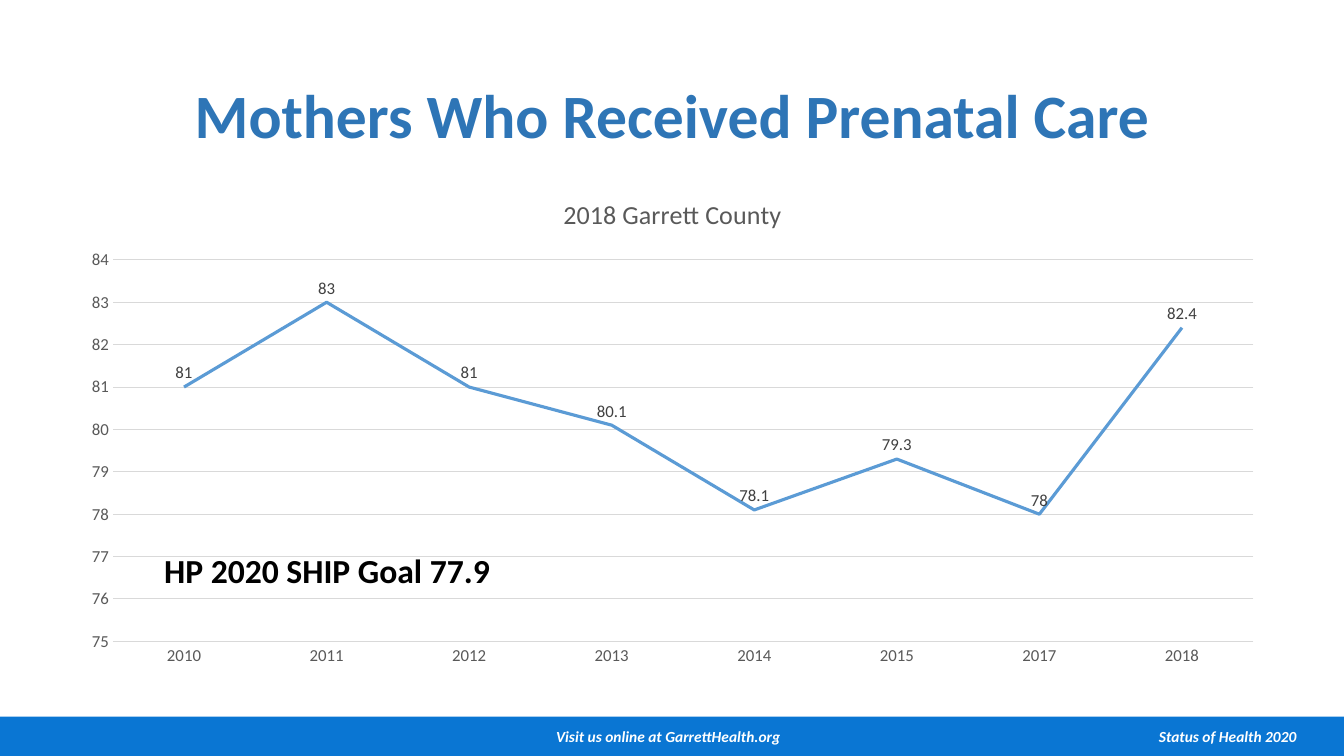
import pptx
import pptx.chart.data
import pptx.dml.color
import pptx.enum.chart
import pptx.enum.shapes
import pptx.enum.text
import pptx.util

Inches = pptx.util.Inches
Pt = pptx.util.Pt
RGBColor = pptx.dml.color.RGBColor
ALIGN = pptx.enum.text.PP_ALIGN
ANCHOR = pptx.enum.text.MSO_ANCHOR

FONT = "Calibri"
TITLE_BLUE = RGBColor(0x2E, 0x75, 0xB6)
BAND_BLUE = RGBColor(0x0A, 0x76, 0xD3)
LINE_BLUE = RGBColor(0x5B, 0x9B, 0xD5)
AXIS_GRAY = RGBColor(0x59, 0x59, 0x59)
LABEL_GRAY = RGBColor(0x40, 0x40, 0x40)
GRID_GRAY = RGBColor(0xD9, 0xD9, 0xD9)
WHITE = RGBColor(0xFF, 0xFF, 0xFF)
BLACK = RGBColor(0, 0, 0)

TITLE = "Mothers Who Received Prenatal Care"
CHART_TITLE = "2018 Garrett County"
GOAL = "HP 2020 SHIP Goal 77.9"
PRENATAL_CARE = {
    "2010": 81, "2011": 83, "2012": 81, "2013": 80.1,
    "2014": 78.1, "2015": 79.3, "2017": 78, "2018": 82.4,
}
BAND = (0, 7.11, 13.33, 0.39)
# text, box (left, top, width, height), alignment
FOOTER = [
    ("Visit us online at GarrettHealth.org", (4.63, 7.11, 4, 0.39), ALIGN.CENTER),
    ("Status of Health 2020", (9.96, 7.11, 3, 0.39), ALIGN.RIGHT),
]


def style_font(font, size, color, bold=False, italic=False):
    font.name = FONT
    font.size = Pt(size)
    font.color.rgb = color
    font.bold = bold
    font.italic = italic


def add_text(slide, text, box, size, color, align=ALIGN.LEFT,
             anchor=ANCHOR.MIDDLE, italic=False):
    frame = slide.shapes.add_textbox(*map(Inches, box)).text_frame
    frame.word_wrap = True
    frame.vertical_anchor = anchor
    paragraph = frame.paragraphs[0]
    paragraph.alignment = align
    run = paragraph.add_run()
    run.text = text
    style_font(run.font, size, color, bold=True, italic=italic)


def add_band(slide):
    band = slide.shapes.add_shape(
        pptx.enum.shapes.MSO_SHAPE.RECTANGLE, *map(Inches, BAND))
    band.shadow.inherit = False
    band.fill.solid()
    band.fill.fore_color.rgb = BAND_BLUE
    band.line.fill.background()


def style_line(line, color, width):
    line.color.rgb = color
    line.width = Pt(width)


def add_care_chart(slide):
    data = pptx.chart.data.CategoryChartData()
    data.categories = list(PRENATAL_CARE)
    data.add_series("Series 1", list(PRENATAL_CARE.values()))
    chart = slide.shapes.add_chart(
        pptx.enum.chart.XL_CHART_TYPE.LINE,
        *map(Inches, (0.67, 1.75, 12, 4.95)), data).chart
    style_font(chart.font, 10, BLACK)
    chart.has_legend = False
    chart.has_title = True
    run = chart.chart_title.text_frame.paragraphs[0].add_run()
    run.text = CHART_TITLE
    style_font(run.font, 18.6, AXIS_GRAY)
    chart.chart_title.include_in_layout = False

    for axis in (chart.category_axis, chart.value_axis):
        axis.major_tick_mark = pptx.enum.chart.XL_TICK_MARK.NONE
        axis.minor_tick_mark = pptx.enum.chart.XL_TICK_MARK.NONE
        style_font(axis.tick_labels.font, 12, AXIS_GRAY)
    style_line(chart.category_axis.format.line, GRID_GRAY, 0.75)
    values = chart.value_axis
    values.minimum_scale, values.maximum_scale, values.major_unit = 75, 84, 1
    values.format.line.fill.background()
    values.has_major_gridlines = True
    style_line(values.major_gridlines.format.line, GRID_GRAY, 0.75)

    plot = chart.plots[0]
    plot.vary_by_categories = False
    series = plot.series[0]
    series.smooth = False
    series.marker.style = pptx.enum.chart.XL_MARKER_STYLE.NONE
    style_line(series.format.line, LINE_BLUE, 2.25)
    labels = series.data_labels
    labels.show_value = True
    labels.position = pptx.enum.chart.XL_LABEL_POSITION.ABOVE
    style_font(labels.font, 12, LABEL_GRAY)


def main():
    presentation = pptx.Presentation()
    presentation.slide_width = Inches(13.33)
    presentation.slide_height = Inches(7.5)
    slide = presentation.slides.add_slide(presentation.slide_layouts[6])
    add_band(slide)
    for text, box, align in FOOTER:
        add_text(slide, text, box, 11, WHITE, align, italic=True)
    add_text(slide, TITLE, (0.67, 0.5, 12, 1.25), 44, TITLE_BLUE, ALIGN.CENTER)
    add_care_chart(slide)
    add_text(slide, GOAL, (1.53, 5.41, 3.89, 0.5), 24, BLACK, anchor=ANCHOR.TOP)
    presentation.save("out.pptx")


if __name__ == "__main__":
    main()
